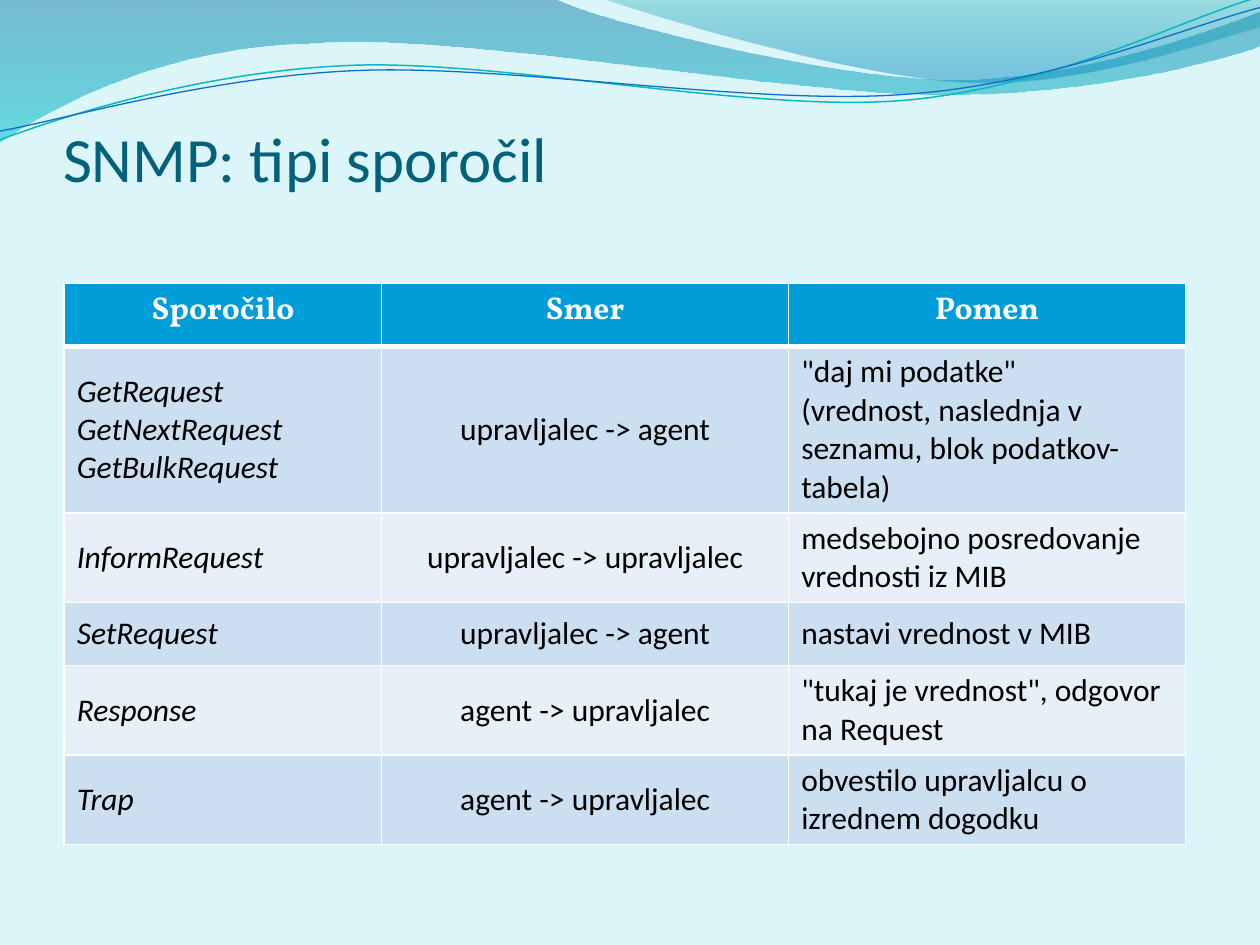
from math import cos, radians, sin

from lxml import etree
from pptx import Presentation
from pptx.dml.color import RGBColor
from pptx.enum.text import MSO_ANCHOR, PP_ALIGN
from pptx.oxml.ns import qn
from pptx.util import Inches, Pt

CENTER, LEFT = PP_ALIGN.CENTER, PP_ALIGN.LEFT
TOP, MIDDLE, BOTTOM = MSO_ANCHOR.TOP, MSO_ANCHOR.MIDDLE, MSO_ANCHOR.BOTTOM

COLORS = {
    "background": "DBF5F9", "title": "04617B", "header": "009DD9",
    "odd": "CCDFF1", "even": "E7EFF8", "white": "FFFFFF", "black": "000000",
}
TITLE = "SNMP: tipi sporočil"
HEADERS = ["Sporočilo", "Smer", "Pomen"]
MESSAGES = [
    ("GetRequest\nGetNextRequest\nGetBulkRequest", "upravljalec -> agent",
     '"daj mi podatke"\n(vrednost, naslednja v seznamu, blok podatkov-tabela)'),
    ("InformRequest", "upravljalec -> upravljalec", "medsebojno posredovanje vrednosti iz MIB"),
    ("SetRequest", "upravljalec -> agent", "nastavi vrednost v MIB"),
    ("Response", "agent -> upravljalec", '"tukaj je vrednost", odgovor na Request'),
    ("Trap", "agent -> upravljalec", "obvestilo upravljalcu o izrednem dogodku"),
]
COLUMN_WIDTHS = [2.52, 3.23, 3.15]
ROW_HEIGHTS = [0.5, 1.22, 0.5, 0.5, 0.5, 0.5]

# Each segment holds one end point, or two control points and an end point.
WAVES = [
    {"frame": (-0.01, -0.01, 10.02, 1.14), "rotation": 0, "start": (0, 0), "segments": [
        [(4.4, -0.01)], [(4.76, 0.17), (6.64, 0.63), (7.58, 0.63)],
        [(8.53, 0.63), (9.58, 0.26), (10, 0.09)], [(10.01, 0.36)],
        [(9.83, 0.44), (8.7, 0.76), (7.46, 0.75)],
        [(6.22, 0.75), (3.82, 0.28), (2.57, 0.34)],
        [(1.29, 0.36), (0.46, 0.83), (-0.01, 1.13)], [(0, 0)]],
     "stops": [(0, "0074A1", 45), (1, "00C6CF", 55)]},
    {"frame": (4.79, -0.01, 5.21, 0.7), "rotation": 0, "start": (4.79, -0.01), "segments": [
        [(5.09, 0.11), (6.82, 0.62), (7.69, 0.65)],
        [(8.56, 0.69), (9.61, 0.32), (10, 0.21)], [(10, 0)], [(4.79, -0.01)]],
     "stops": [(0, "00A1A9", 30), (0.8, "008BBF", 45)]},
    {"frame": (-0.02, 0.22, 10.02, 0.71), "rotation": 357.3, "start": (0, 1.11), "segments": [
        [(0.48, 0.93), (1.58, 0.57), (2.77, 0.52)],
        [(3.95, 0.47), (5.93, 0.89), (7.13, 0.8)],
        [(8.33, 0.71), (9.38, 0.15), (9.98, -0.02)]],
     "line": ("0AB8BF", 0.85)},
    {"frame": (-0.02, 0.3, 10.03, 0.58), "rotation": 357.3, "start": (0, 1.04), "segments": [
        [(0.47, 0.96), (1.64, 0.61), (2.83, 0.56)],
        [(4.03, 0.51), (5.97, 0.84), (7.17, 0.75)],
        [(8.36, 0.67), (9.41, 0.21), (10, 0.06)]],
     "line": ("0F6FC6", 0.75)},
]


def rgb(value):
    return RGBColor.from_string(value)


def to_frame(point, frame, rotation):
    left, top, width, height = frame
    angle = radians(-rotation)
    x, y = point[0] - left - width / 2, point[1] - top - height / 2
    return (Inches(x * cos(angle) - y * sin(angle) + width / 2),
            Inches(x * sin(angle) + y * cos(angle) + height / 2))


def draw_curves(shape, wave):
    outline = next(shape._element.iter(qn("a:path")))
    outline.clear()
    outline.set("w", str(shape.width))
    outline.set("h", str(shape.height))
    moves = [("moveTo", [wave["start"]])]
    moves += [("lnTo" if len(points) == 1 else "cubicBezTo", points)
              for points in wave["segments"]]
    for tag, points in moves:
        move = etree.SubElement(outline, qn(f"a:{tag}"))
        for point in points:
            x, y = to_frame(point, wave["frame"], wave["rotation"])
            etree.SubElement(move, qn("a:pt"), x=str(x), y=str(y))
    if "stops" in wave:
        etree.SubElement(outline, qn("a:close"))


def add_wave(slide, wave):
    builder = slide.shapes.build_freeform(*map(Inches, wave["start"]))
    builder.add_line_segments([tuple(map(Inches, points[-1])) for points in wave["segments"]],
                              close=False)
    shape = builder.convert_to_shape()
    shape.left, shape.top, shape.width, shape.height = map(Inches, wave["frame"])
    shape.rotation = wave["rotation"]
    draw_curves(shape, wave)
    shape.shadow.inherit = False
    if "line" in wave:
        color, width = wave["line"]
        shape.fill.background()
        shape.line.color.rgb = rgb(color)
        shape.line.width = Pt(width)
        return
    shape.line.fill.background()
    shape.fill.gradient()
    shape.fill.gradient_angle = 270
    for stop, (position, color, _) in zip(shape.fill.gradient_stops, wave["stops"]):
        stop.position = position
        stop.color.rgb = rgb(color)
    colors = list(shape._element.spPr.iter(qn("a:srgbClr")))
    for element, (_, _, opacity) in zip(colors, wave["stops"]):
        etree.SubElement(element, qn("a:alpha"), val=str(opacity * 1000))


def format_text(frame, size, font, color, align=LEFT, bold=False, italic=False):
    for para in frame.paragraphs:
        para.alignment = align
        for span in para.runs:
            span.font.size = Pt(size)
            span.font.name = font
            span.font.color.rgb = rgb(color)
            span.font.bold = bold
            span.font.italic = italic


def set_borders(cell, widths):
    properties = cell._tc.get_or_add_tcPr()
    for index, (side, width) in enumerate(widths.items()):
        line = etree.Element(qn(f"a:ln{side}"), w=str(Pt(width)))
        fill = etree.SubElement(line, qn("a:solidFill"))
        etree.SubElement(fill, qn("a:srgbClr"), val=COLORS["white"])
        properties.insert(index, line)


def add_message_table(slide):
    rows = [HEADERS, *MESSAGES]
    table = slide.shapes.add_table(
        len(rows), len(HEADERS), Inches(0.51), Inches(2.25),
        Inches(sum(COLUMN_WIDTHS)), Inches(sum(ROW_HEIGHTS))).table
    for column, width in zip(table.columns, COLUMN_WIDTHS):
        column.width = Inches(width)
    for row, height in zip(table.rows, ROW_HEIGHTS):
        row.height = Inches(height)
    for r, texts in enumerate(rows):
        header = r == 0
        band = "header" if header else "odd" if r % 2 else "even"
        for c, text in enumerate(texts):
            cell = table.cell(r, c)
            cell.text_frame.text = text
            cell.vertical_anchor = TOP if header else MIDDLE
            cell.fill.solid()
            cell.fill.fore_color.rgb = rgb(COLORS[band])
            set_borders(cell, {"L": 1, "R": 1, "T": 3 if r == 1 else 1, "B": 3 if header else 1})
            format_text(cell.text_frame, 18, "Vollkorn" if header else "Calibri",
                        COLORS["white" if header else "black"],
                        CENTER if header or c == 1 else LEFT,
                        bold=header, italic=not header and c == 0)


def add_title(slide):
    title = slide.shapes.title
    title.left, title.top, title.width, title.height = map(Inches, (0.5, 0.76, 9, 0.79))
    frame = title.text_frame
    frame.text = TITLE
    frame.word_wrap = True
    frame.vertical_anchor = BOTTOM
    frame.margin_left = frame.margin_right = frame.margin_bottom = 0
    frame.margin_top = Inches(0.05)
    format_text(frame, 36, "Calibri", COLORS["title"])
    slide.shapes._spTree.append(title._element)


def main():
    deck = Presentation()
    deck.slide_width, deck.slide_height = Inches(10), Inches(7.5)
    slide = deck.slides.add_slide(deck.slide_layouts[5])
    slide.background.fill.solid()
    slide.background.fill.fore_color.rgb = rgb(COLORS["background"])
    for wave in WAVES:
        add_wave(slide, wave)
    add_title(slide)
    add_message_table(slide)
    deck.save("out.pptx")


if __name__ == "__main__":
    main()
